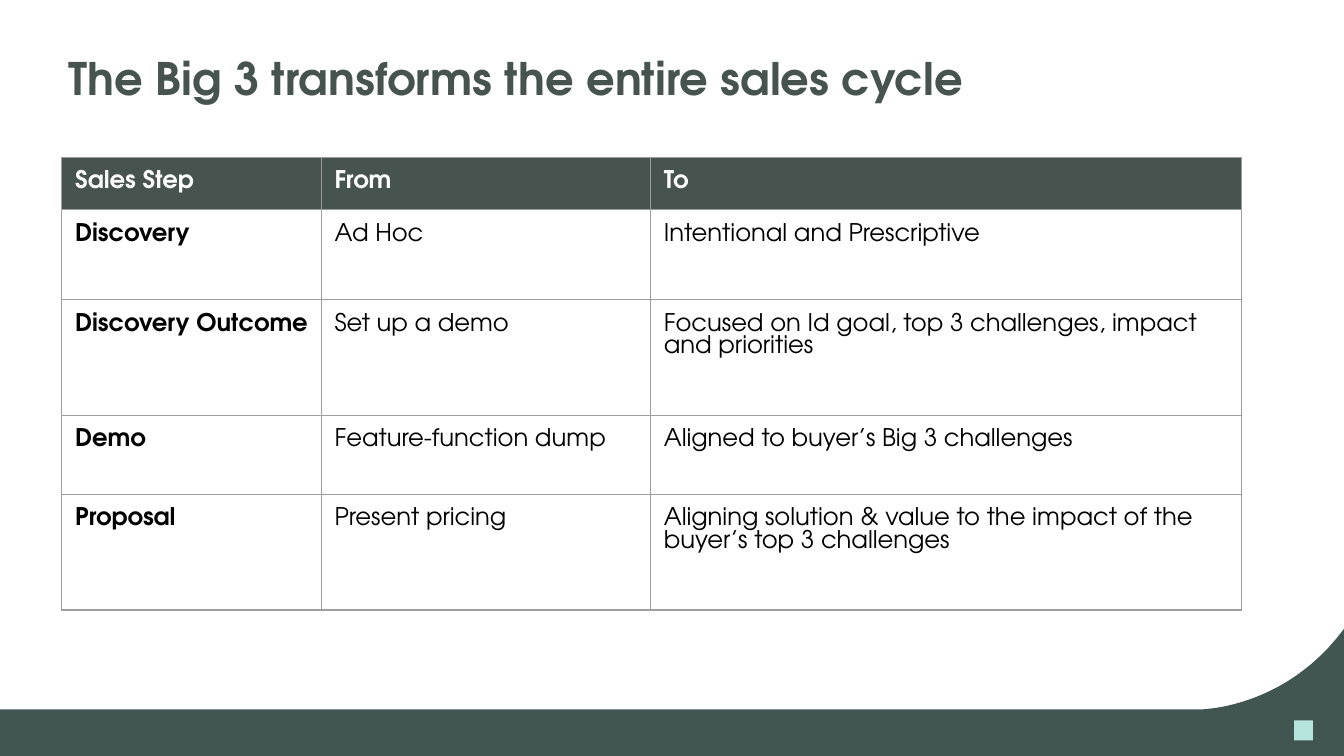
import pptx
import pptx.util
import pptx.dml.color
import pptx.enum.shapes
import pptx.enum.text
import pptx.oxml
import pptx.oxml.ns

Inches = pptx.util.Inches
Pt = pptx.util.Pt
RGB = pptx.dml.color.RGBColor.from_string

THEME = {
    "font": "TeX Gyre Adventor",
    "heading": "47534F",
    "footer": "415651",
    "accent": "B5E5DC",
    "border": "9E9E9E",
    "header_text": "FFFFFF",
    "body_text": "000000",
    "title_size": 24,
    "table_size": 13,
    "border_width": 0.75,
}

TITLE = "The Big 3 transforms the entire sales cycle"
SALES_STEPS = [
    ("Sales Step", "From", "To"),
    ("Discovery", "Ad Hoc", "Intentional and Prescriptive"),
    ("Discovery Outcome", "Set up a demo",
     "Focused on Id goal, top 3 challenges, impact and priorities"),
    ("Demo", "Feature-function dump", "Aligned to buyer’s Big 3 challenges"),
    ("Proposal", "Present pricing",
     "Aligning solution & value to the impact of the buyer’s top 3 challenges"),
]
SLIDE_WIDTH = 10
SLIDE_HEIGHT = SLIDE_WIDTH * 9 / 16
COLUMN_WIDTHS = [1.93, 2.45, 4.4]
ROW_HEIGHTS = [0.39, 0.67, 0.86, 0.59, 0.86]
FOOTER_CURVE = [(8.91, 5.28), (8.91, 5.28), (9.55, 5.29), (10, 4.68)]
CURVE_STEPS = 24


def apply(target, formats):
    for name, value in formats.items():
        setattr(target, name, value)


def style_font(font, size, color, bold):
    apply(font, {"name": THEME["font"], "size": Pt(size), "bold": bold})
    font.color.rgb = RGB(color)


def paint(shape, color):
    shape.shadow.inherit = False
    shape.fill.solid()
    shape.fill.fore_color.rgb = RGB(color)
    shape.line.fill.background()


def bezier(points, t):
    weights = [(1 - t) ** 3, 3 * t * (1 - t) ** 2, 3 * t ** 2 * (1 - t), t ** 3]
    return tuple(sum(w * p[axis] for w, p in zip(weights, points)) for axis in (0, 1))


def add_borders(cell):
    properties = cell._tc.get_or_add_tcPr()
    for position, side in enumerate(("lnL", "lnR", "lnT", "lnB")):
        properties.insert(position, pptx.oxml.parse_xml(
            f'<a:{side} {pptx.oxml.ns.nsdecls("a")} w="{Pt(THEME["border_width"])}">'
            f'<a:solidFill><a:srgbClr val="{THEME["border"]}"/></a:solidFill></a:{side}>'))


def add_footer(slide):
    curve = [bezier(FOOTER_CURVE, step / CURVE_STEPS) for step in range(CURVE_STEPS + 1)]
    outline = [(Inches(x), Inches(y)) for x, y in [(0, SLIDE_HEIGHT), (0, 5.28), *curve]]
    builder = slide.shapes.build_freeform(Inches(SLIDE_WIDTH), Inches(SLIDE_HEIGHT))
    builder.add_line_segments(outline, close=True)
    paint(builder.convert_to_shape(), THEME["footer"])
    mark = slide.shapes.add_shape(
        pptx.enum.shapes.MSO_SHAPE.RECTANGLE,
        Inches(9.63), Inches(5.36), Inches(0.14), Inches(0.15))
    paint(mark, THEME["accent"])


def add_title(slide):
    title = slide.shapes.title
    apply(title, {"left": Inches(0.46), "top": Inches(0.37),
                  "width": Inches(9.08), "height": Inches(0.43)})
    frame = title.text_frame
    frame.text = TITLE
    apply(frame, {
        "margin_left": Inches(0.05), "margin_right": Inches(0.05),
        "margin_top": Inches(0.02), "margin_bottom": Inches(0.02),
        "word_wrap": True, "auto_size": pptx.enum.text.MSO_AUTO_SIZE.NONE,
        "vertical_anchor": pptx.enum.text.MSO_ANCHOR.BOTTOM})
    heading = frame.paragraphs[0]
    apply(heading, {"alignment": pptx.enum.text.PP_ALIGN.LEFT, "line_spacing": 0.9})
    style_font(heading.font, THEME["title_size"], THEME["heading"], True)


def add_sales_table(slide):
    table = slide.shapes.add_table(
        len(SALES_STEPS), len(COLUMN_WIDTHS), Inches(0.46), Inches(1.17),
        Inches(sum(COLUMN_WIDTHS)), Inches(sum(ROW_HEIGHTS))).table
    apply(table, {"first_row": False, "horz_banding": False})
    for column, width in zip(table.columns, COLUMN_WIDTHS):
        column.width = Inches(width)
    for row, height in zip(table.rows, ROW_HEIGHTS):
        row.height = Inches(height)
    margins = {f"margin_{side}": Inches(0.1) for side in ("left", "right", "top", "bottom")}
    for r, step in enumerate(SALES_STEPS):
        for c, text in enumerate(step):
            cell = table.cell(r, c)
            cell.text = text
            apply(cell, margins)
            is_header = r == 0
            if is_header:
                cell.fill.solid()
                cell.fill.fore_color.rgb = RGB(THEME["heading"])
            else:
                cell.fill.background()
            color = THEME["header_text" if is_header else "body_text"]
            style_font(cell.text_frame.paragraphs[0].font, THEME["table_size"],
                       color, is_header or c == 0)
            add_borders(cell)


def main():
    deck = pptx.Presentation()
    apply(deck, {"slide_width": Inches(SLIDE_WIDTH), "slide_height": Inches(SLIDE_HEIGHT)})
    slide = deck.slides.add_slide(deck.slide_layouts[5])
    add_footer(slide)
    add_title(slide)
    add_sales_table(slide)
    deck.save("out.pptx")


if __name__ == "__main__":
    main()
